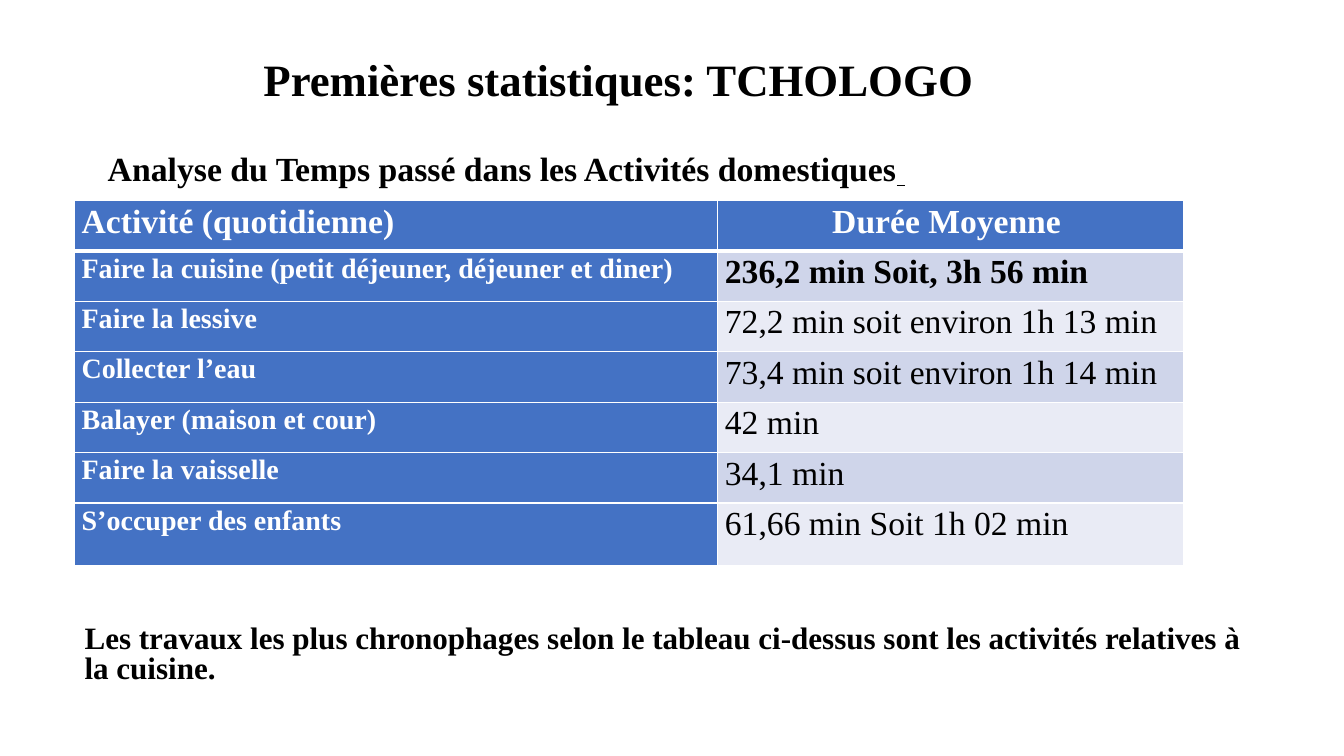
from lxml import etree
from pptx import Presentation
from pptx.dml.color import RGBColor
from pptx.enum.text import MSO_ANCHOR, PP_ALIGN
from pptx.oxml.ns import qn
from pptx.util import Inches, Pt

FONT = "Times New Roman"
COLORS = {"black": "000000", "white": "FFFFFF", "blue": "4472C4",
          "dark": "CFD5EA", "light": "E9EBF5"}

prs = Presentation()
prs.slide_width, prs.slide_height = Inches(13.33), Inches(7.5)
slide = prs.slides.add_slide(prs.slide_layouts[6])


def style(para, size, color="black", bold=True, align=PP_ALIGN.LEFT, space=1.0):
    para.font.name = FONT
    para.font.size = Pt(size)
    para.font.bold = bold
    para.font.color.rgb = RGBColor.from_string(COLORS[color])
    para.alignment = align
    para.line_spacing = space


def add_text(text, left, top, width, height, size, **look):
    frame = slide.shapes.add_textbox(
        Inches(left), Inches(top), Inches(width), Inches(height)).text_frame
    frame.word_wrap = True
    para = frame.paragraphs[0]
    para.add_run().text = text
    style(para, size, **look)
    return frame


# Title, subtitle and conclusion
title = add_text("Premières statistiques: TCHOLOGO", 0.74, 0.44, 10.79, 0.75,
                 32, align=PP_ALIGN.CENTER, space=0.9)
title.vertical_anchor = MSO_ANCHOR.MIDDLE
intro = add_text("Analyse du Temps passé dans les Activités domestiques",
                 0.97, 1.42, 11.62, 0.5, 24.1)
tail = intro.paragraphs[0].add_run()
tail.text = " "
tail.font.underline = True
add_text("Les travaux les plus chronophages selon le tableau ci-dessus sont "
         "les activités relatives à la cuisine.",
         0.74, 6.16, 11.85, 0.75, 22.2, space=0.8)

# Table of durations
rows = [
    ("Activité (quotidienne)", "Durée Moyenne "),
    ("Faire la cuisine (petit déjeuner, déjeuner et diner)",
     "236,2 min Soit, 3h 56 min"),
    ("Faire la lessive", "72,2 min soit environ 1h 13 min"),
    ("Collecter l’eau", "73,4 min soit environ 1h 14 min"),
    ("Balayer (maison et cour)", "42 min"),
    ("Faire la vaisselle", "34,1 min"),
    ("S’occuper des enfants", "61,66 min Soit 1h 02 min"),
]
table = slide.shapes.add_table(len(rows), 2, Inches(0.74), Inches(1.99),
                               Inches(11), Inches(3.62)).table
for col, width in zip(table.columns, (6.38, 4.62)):
    col.width = Inches(width)
for row in table.rows:
    row.height = Inches(0.5)
table.rows[len(rows) - 1].height = Inches(0.62)

for i, row in enumerate(rows):
    for j, text in enumerate(row):
        cell = table.cell(i, j)
        cell.text = text
        cell.margin_left = cell.margin_right = Inches(0.07)
        cell.margin_top = cell.margin_bottom = 0
        head, label = i == 0, j == 0
        align = (PP_ALIGN.JUSTIFY if label
                 else PP_ALIGN.CENTER if head else PP_ALIGN.LEFT)
        para = cell.text_frame.paragraphs[0]
        style(para, 20 if label and not head else 24,
              "white" if head or label else "black",
              label or i < 2, align, 1.07)
        para.space_after = Pt(8)

        # White borders, thicker below the header
        props = cell._tc.get_or_add_tcPr()
        for side in "LRTB":
            thick = (i, side) in ((0, "B"), (1, "T"))
            line = etree.SubElement(props, qn("a:ln" + side),
                                    w=str(Pt(3 if thick else 1)))
            paint = etree.SubElement(line, qn("a:solidFill"))
            etree.SubElement(paint, qn("a:srgbClr"), val=COLORS["white"])

        band = "blue" if head or label else "dark" if i % 2 else "light"
        cell.fill.solid()
        cell.fill.fore_color.rgb = RGBColor.from_string(COLORS[band])

prs.save("out.pptx")
